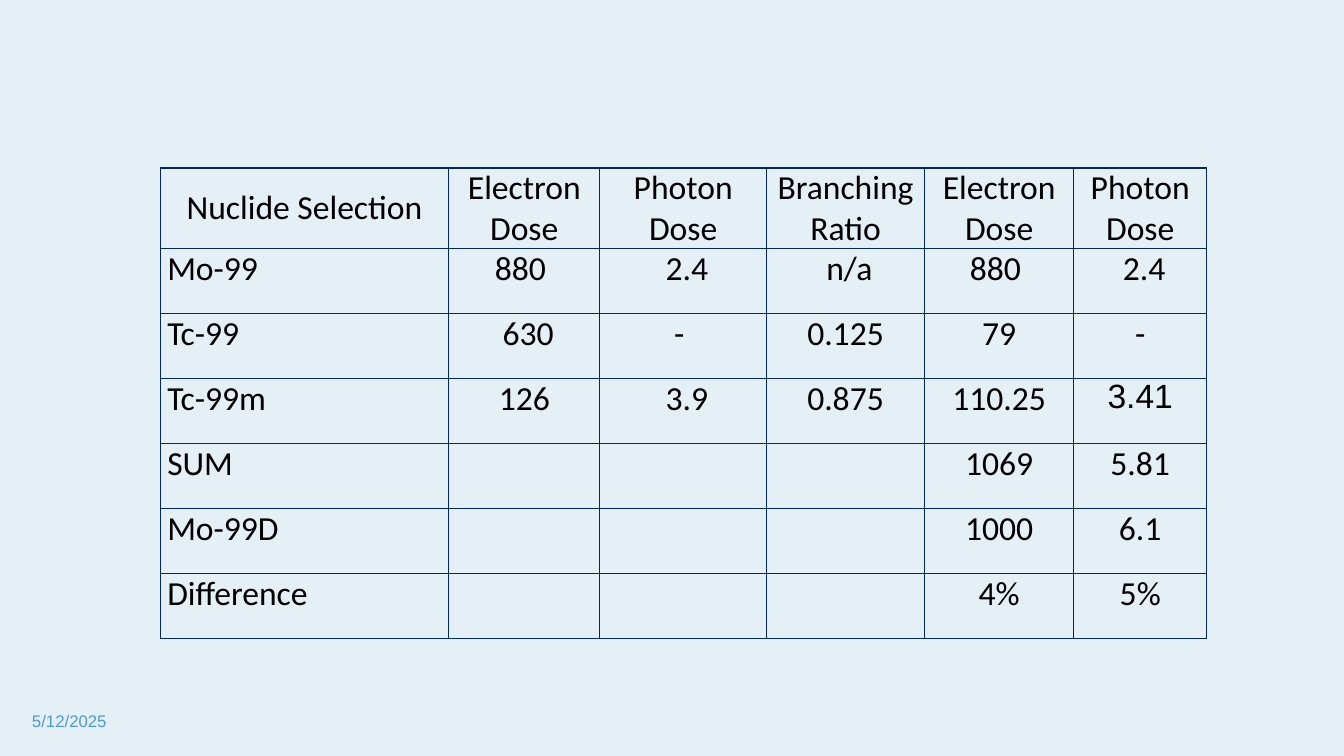
"""Build the slide that compares nuclide doses in a table."""
from lxml import etree
from pptx import Presentation
from pptx.dml.color import RGBColor
from pptx.enum.text import MSO_ANCHOR, PP_ALIGN
from pptx.oxml.ns import qn
from pptx.util import Pt

BACKGROUND = RGBColor(0xE5, 0xEF, 0xF6)
BLACK = RGBColor(0x00, 0x00, 0x00)
DATE_BLUE = RGBColor(0x4B, 0x9C, 0xD3)
BORDER_NAVY = RGBColor(0x00, 0x29, 0x66)
LEFT, CENTER, JUSTIFY = PP_ALIGN.LEFT, PP_ALIGN.CENTER, PP_ALIGN.JUSTIFY
TOP, MIDDLE = MSO_ANCHOR.TOP, MSO_ANCHOR.MIDDLE

COLUMN_WIDTHS = [206, 108, 119, 113, 106.5, 95]
ROW_HEIGHT = 46.4
DOSES = [
    ["Nuclide Selection", "Electron Dose", "Photon Dose",
     "Branching Ratio", "Electron Dose", "Photon Dose"],
    ["Mo-99", "880 ", " 2.4", " n/a", "880 ", " 2.4"],
    ["Tc-99", " 630", "- ", "0.125", "79", "-"],
    ["Tc-99m", "126", " 3.9", "0.875", "110.25", "3.41"],
    ["SUM", "", "", "", "1069", "5.81"],
    ["Mo-99D", "", "", "", "1000", "6.1"],
    ["Difference", "", "", "", "4%", "5%"],
]


def write_text(frame, text, size=24, font="Calibri", color=BLACK, align=CENTER):
    """Write one formatted paragraph into a text frame."""
    para = frame.paragraphs[0]
    para.alignment = align
    if text:
        span = para.add_run()
        span.text = text
        span.font.size = Pt(size)
        span.font.name = font
        span.font.color.rgb = color


def add_date(page, text):
    """Add the date in the lower left corner."""
    box = page.shapes.add_textbox(Pt(15.8), Pt(500.4), Pt(216), Pt(28.8))
    box.text_frame.word_wrap = True
    box.text_frame.vertical_anchor = MIDDLE
    write_text(box.text_frame, text, size=12, font="Arial", color=DATE_BLUE, align=LEFT)


def draw_borders(cell):
    """Draw a thin line on all four sides of a cell."""
    properties = cell._tc.get_or_add_tcPr()
    for side in ("a:lnL", "a:lnR", "a:lnT", "a:lnB"):
        line = etree.SubElement(properties, qn(side), w=str(Pt(1)))
        fill = etree.SubElement(line, qn("a:solidFill"))
        etree.SubElement(fill, qn("a:srgbClr"), val=str(BORDER_NAVY))


def add_dose_table(page, rows):
    """Add the table with a header row and a label column."""
    table = page.shapes.add_table(
        len(rows), len(COLUMN_WIDTHS), Pt(114.5), Pt(120),
        Pt(sum(COLUMN_WIDTHS)), Pt(ROW_HEIGHT * len(rows))).table
    table.first_row = False
    table.horz_banding = False
    for column, width in zip(table.columns, COLUMN_WIDTHS):
        column.width = Pt(width)
    for row_index, values in enumerate(rows):
        table.rows[row_index].height = Pt(ROW_HEIGHT)
        for column_index, value in enumerate(values):
            cell = table.cell(row_index, column_index)
            is_header = row_index == 0
            is_label = column_index == 0 and not is_header
            draw_borders(cell)
            cell.fill.background()
            cell.margin_left = cell.margin_right = Pt(5)
            cell.margin_top = cell.margin_bottom = Pt(0)
            cell.vertical_anchor = MIDDLE if is_header else TOP
            write_text(cell.text_frame, value,
                       font="Arial" if value == "3.41" else "Calibri",
                       align=JUSTIFY if is_label else CENTER)


def main():
    """Build and save the deck."""
    deck = Presentation()
    deck.slide_width, deck.slide_height = Pt(960), Pt(540)
    page = deck.slides.add_slide(deck.slide_layouts[6])
    page.background.fill.solid()
    page.background.fill.fore_color.rgb = BACKGROUND
    add_date(page, "5/12/2025")
    add_dose_table(page, DOSES)
    deck.save("out.pptx")


if __name__ == "__main__":
    main()
